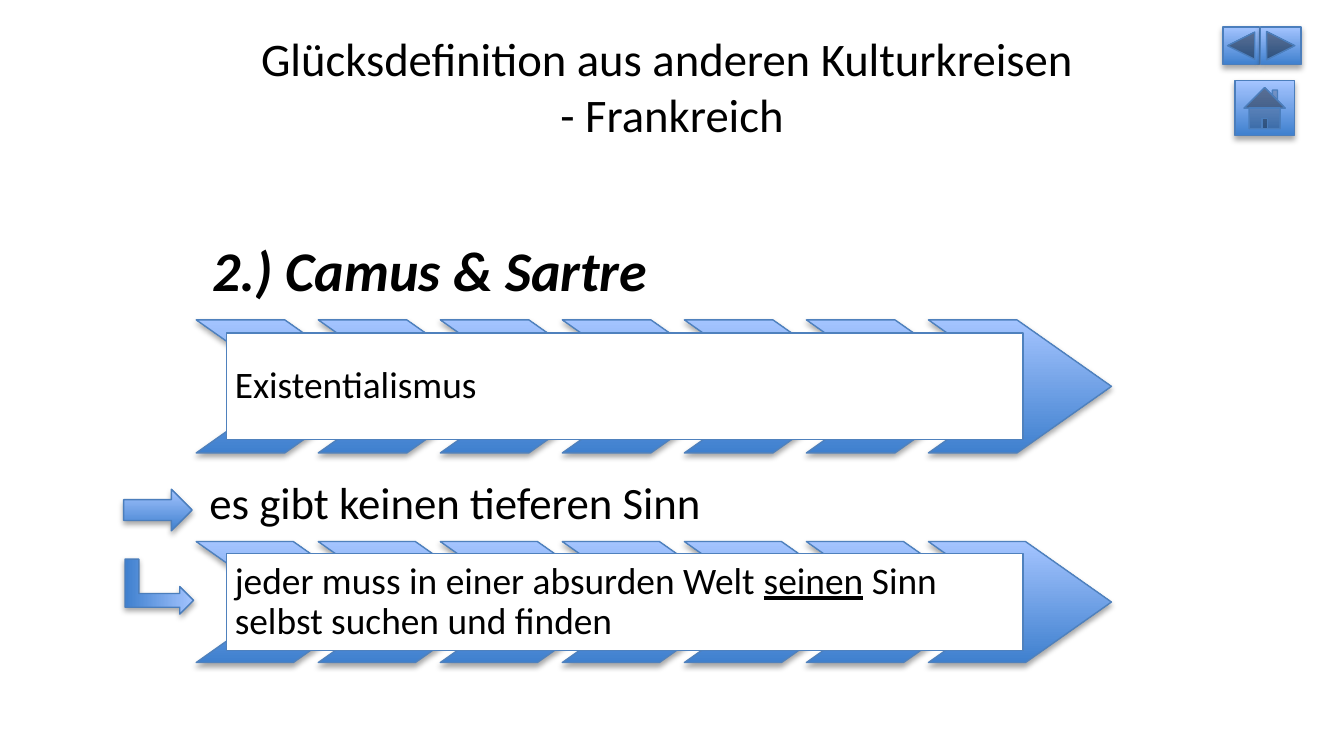
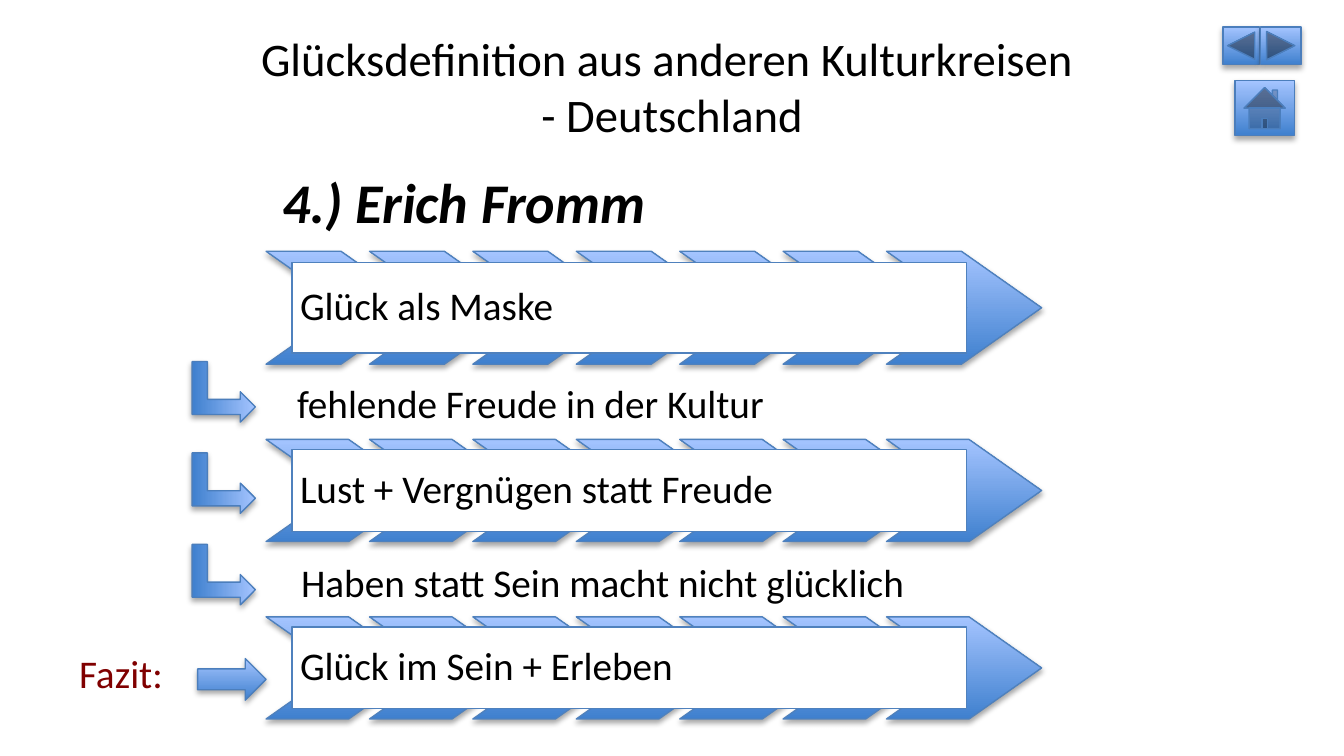
from lxml.etree import SubElement as Sub
from pptx import Presentation
from pptx.dml.color import RGBColor as Rgb
from pptx.enum.shapes import MSO_SHAPE as Kind
from pptx.enum.text import MSO_ANCHOR as Anchor, MSO_AUTO_SIZE as Auto, PP_ALIGN as Align
from pptx.oxml.ns import qn
from pptx.util import Inches, Pt

HUES = {"low": "3F80CE", "high": "A4C4FF", "edge": "4B7EBC", "band": "4F81BD",
        "white": "FFFFFF", "black": "000000", "red": "800000"}
FONT = "Calibri"
COUNT = 7
WIDTH = Inches(10)
LEAD = "Glücksdefinition aus anderen Kulturkreisen \v- "
SIDES = ("left", "top", "right", "bottom")


def hue(name):
    """Return the named colour."""
    return Rgb.from_string(HUES[name])


def apply(item, form):
    """Set each value of a format dict on an object."""
    for key, value in form.items():
        setattr(item, key, value)


def write(shape, runs, size, color="black", align=Align.LEFT, pad=None, space=None,
          frame=None, **style):
    """Write (text, underline) runs as one paragraph in a shape."""
    body = shape.text_frame
    apply(body, {"word_wrap": True, "vertical_anchor": Anchor.MIDDLE, **(frame or {})})
    if pad is not None:
        apply(body, {f"margin_{side}": Inches(pad) for side in SIDES})
    para = body.paragraphs[0]
    apply(para, {"alignment": align, "line_spacing": space})
    for text, under in runs:
        for i, part in enumerate(text.split("\v")):
            if i:
                para.add_line_break()
            run = para.add_run()
            run.text = part
            apply(run.font, {"name": FONT, "size": Pt(size), "underline": under, **style})
            run.font.color.rgb = hue(color)


def label(slide, box, text, size, **form):
    """Add a text box."""
    shape = slide.shapes.add_textbox(*map(Inches, box))
    write(shape, [(text, None)], size, **form)


def glossy(slide, kind, box, edge="edge", turn=0):
    """Add a shape with the blue gradient and a soft shadow."""
    shape = slide.shapes.add_shape(kind, *map(Inches, box))
    shape.rotation = turn
    shape.fill.gradient()
    shape.fill.gradient_angle = 90
    for stop, name, place in zip(shape.fill.gradient_stops, ("low", "high"), (0, 1)):
        stop.color.rgb = hue(name)
        stop.position = place
    shape.line.color.rgb = hue(edge)
    shape.line.width = Pt(0.75)
    shape.shadow.inherit = False
    glow = Sub(shape._element.spPr.find(qn("a:effectLst")), qn("a:outerShdw"),
               blurRad=str(Pt(3.1)), dist=str(Pt(1.8)), dir="5400000", rotWithShape="0")
    tint = Sub(glow, qn("a:srgbClr"), val=HUES["black"])
    Sub(tint, qn("a:alpha"), val="35000")
    return shape


def header(slide, land):
    """Add the title and the three buttons at the top."""
    glossy(slide, Kind.ACTION_BUTTON_BACK_OR_PREVIOUS, (9.1, 0.2, 0.27, 0.28))
    glossy(slide, Kind.ACTION_BUTTON_FORWARD_OR_NEXT, (9.38, 0.2, 0.3, 0.28))
    label(slide, (0.5, 0.17, 9, 0.94), LEAD + land, 25, align=Align.CENTER)
    glossy(slide, Kind.ACTION_BUTTON_HOME, (9.19, 0.6, 0.44, 0.41))


def band(slide, box, runs, size):
    """Fill a box with a row of chevrons and a white text panel."""
    left, top, wide, high = box
    unit = wide / 5
    step = (wide - unit) / (COUNT - 1)
    for i in range(COUNT):
        arrow = glossy(slide, Kind.CHEVRON, (left + i * step, top, unit, high), "band")
        arrow.adjustments[0] = 0.71
    panel = slide.shapes.add_shape(Kind.RECTANGLE, *map(Inches, (
        left + wide / 30, top + high / 10, wide * 0.87, high * 0.8)))
    panel.shadow.inherit = False
    panel.fill.solid()
    panel.fill.fore_color.rgb = hue("white")
    panel.line.color.rgb = hue("band")
    panel.line.width = Pt(0.75)
    write(panel, runs, size, pad=0.06, space=0.9)


def caption(slide, box, text, size, pad, **style):
    """Add a line of text that rests on the foot of its box."""
    label(slide, box, text, size, pad=pad, space=0.9,
          frame={"vertical_anchor": Anchor.BOTTOM}, **style)


def french(slide):
    """Build the slide on France."""
    left, wide, span = 1.46, 6.44, 6.81
    header(slide, "Frankreich")
    caption(slide, (left, 1.79, wide, 0.59), "2.) Camus & Sartre", 30, 0.12,
            bold=True, italic=True)
    band(slide, (left, 2.38, span, 0.99), [("Existentialismus", None)], 20)
    caption(slide, (left, 3.45, wide, 0.59), "es gibt keinen tieferen Sinn", 24, 0.1)
    band(slide, (left, 4.03, span, 0.9),
         [("jeder muss in einer absurden Welt ", None), ("seinen", True),
          (" Sinn selbst suchen und finden", None)], 20)
    glossy(slide, Kind.RIGHT_ARROW, (0.92, 3.64, 0.51, 0.31))
    glossy(slide, Kind.BENT_UP_ARROW, (0.98, 4.11, 0.41, 0.51), turn=90)


def german(slide):
    """Build the slide on Germany."""
    left, wide, span, size = 1.98, 5.47, 5.77, 21
    header(slide, "Deutschland")
    caption(slide, (left, 1.37, wide, 0.5), "4.) Erich Fromm", 30, 0.12,
            bold=True, italic=True)
    for top, high, text in ((1.87, 0.84, "Glück als Maske"),
                            (3.27, 0.76, "Lust + Vergnügen statt Freude"),
                            (4.59, 0.76, "Glück im Sein + Erleben")):
        band(slide, (left, top, span, high), [(text, None)], size)
    for x, y, text in ((2.12, 2.77, "fehlende Freude in der Kultur"),
                       (2.15, 4.1, "Haben statt Sein macht nicht glücklich")):
        caption(slide, (x, y, wide, 0.5), text, size, 0.09)
    label(slide, (0.49, 4.78, 0.84, 0.45), "Fazit:", size, color="red",
          frame={"word_wrap": False, "auto_size": Auto.SHAPE_TO_FIT_TEXT,
                 "vertical_anchor": Anchor.TOP})
    glossy(slide, Kind.RIGHT_ARROW, (1.47, 4.9, 0.51, 0.31))
    for i in range(3):
        glossy(slide, Kind.BENT_UP_ARROW, (1.44, 2.68 + i * 0.68, 0.45, 0.47), turn=90)


def main():
    """Build and save the slides."""
    deck = Presentation()
    apply(deck, {"slide_width": WIDTH, "slide_height": WIDTH * 9 // 16})
    for build in (french, german):
        build(deck.slides.add_slide(deck.slide_layouts[6]))
    deck.save("out.pptx")


if __name__ == "__main__":
    main()
